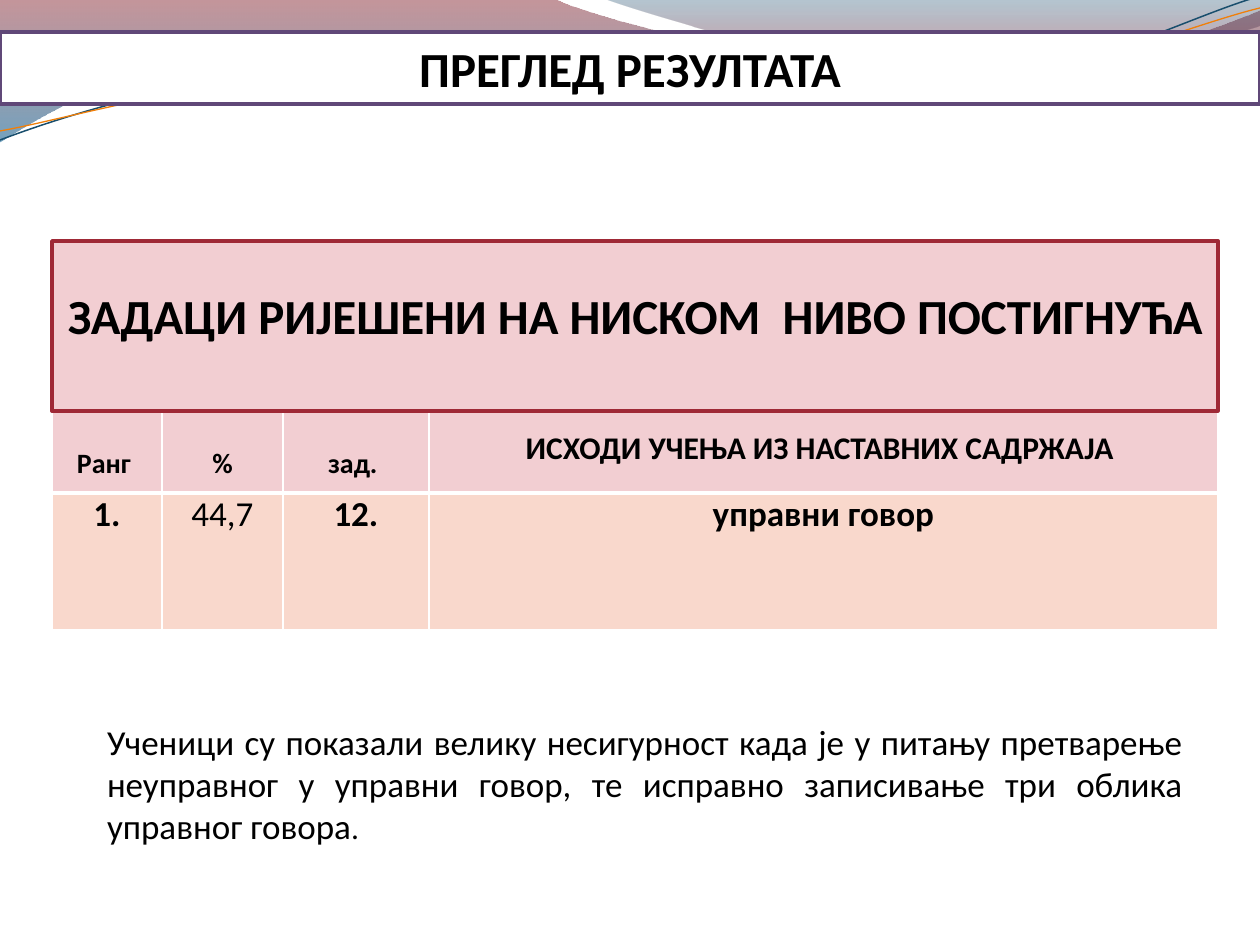
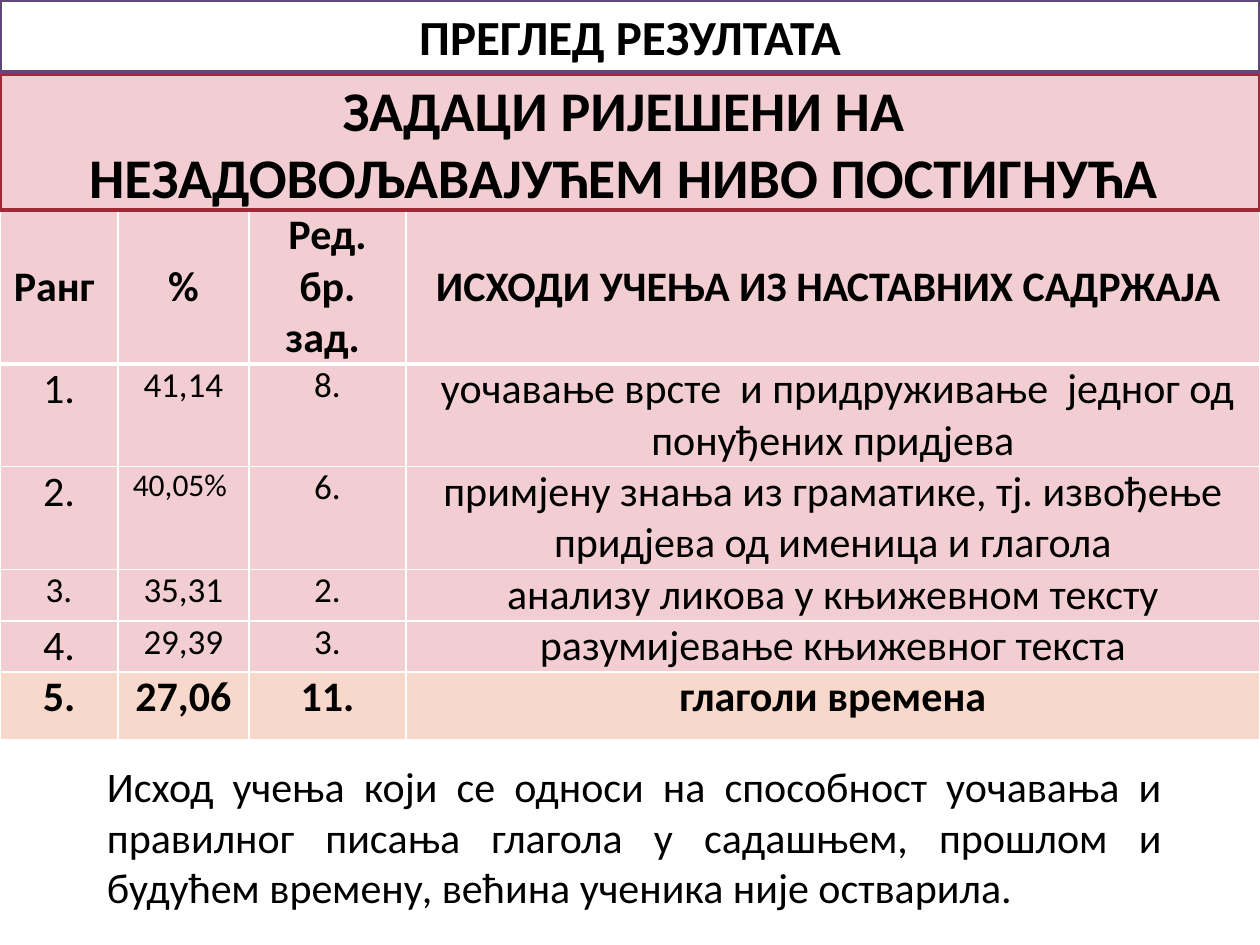
from dataclasses import dataclass
from typing import Any

from lxml.etree import SubElement
from pptx import Presentation
from pptx.dml.color import RGBColor
from pptx.enum.shapes import MSO_SHAPE
from pptx.enum.text import MSO_ANCHOR, MSO_AUTO_SIZE, PP_ALIGN
from pptx.oxml.ns import qn
from pptx.util import Emu, Pt

EMU_PER_PX = 914400 / 126
SLIDE_WIDTH, SLIDE_HEIGHT = 1260, 945
FONT = "Calibri"
HEADING = "ПРЕГЛЕД РЕЗУЛТАТА"
COLORS = {
    "text": "000000",
    "white": "FFFFFF",
    "pink": "F2CED2",
    "peach": "F9D8CC",
    "banner_line": "9F2936",
    "heading_line": "604878",
    "band_red": "7E1621",
    "band_blue": "005689",
    "band_navy": "094467",
    "band_crimson": "A10F1F",
    "wave_navy": "184E6D",
    "wave_orange": "F07F09",
}
Point = tuple[int, int]


@dataclass(frozen=True)
class Box:
    left: int
    top: int
    width: int
    height: int


@dataclass(frozen=True)
class Stop:
    position: float
    color: str
    opacity: int


@dataclass(frozen=True)
class Wave:
    """Path of straight (one point) and cubic (three points) segments."""
    start: Point
    segments: list[list[Point]]
    stops: tuple[Stop, ...] = ()
    line: str = ""
    line_width: float = 0


@dataclass(frozen=True)
class Cell:
    """A line feed in the text starts a paragraph; gap is the space before it."""
    text: str
    size: int
    bold: bool = False
    top: int = 0
    gap: int = 0


@dataclass(frozen=True)
class ResultTable:
    left: int
    top: int
    columns: list[int]
    heights: list[int]
    rows: list[list[Cell]]


WAVES = [
    Wave((0, 0), [
        [(554, -1)],
        [(600, 21), (837, 79), (955, 79)],
        [(1074, 79), (1207, 33), (1260, 11)],
        [(1261, 45)],
        [(1239, 55), (1096, 96), (940, 95)],
        [(784, 95), (481, 35), (324, 43)],
        [(163, 45), (58, 105), (-1, 142)],
        [(0, 0)],
    ], stops=(Stop(0, "band_red", 45), Stop(1, "band_blue", 55))),
    Wave((604, -1), [
        [(643, 14), (859, 78), (969, 82)],
        [(1079, 87), (1211, 40), (1260, 26)],
        [(1260, 0)],
        [(604, -1)],
    ], stops=(Stop(0, "band_navy", 30), Stop(0.8, "band_crimson", 45))),
    Wave((0, 140), [
        [(60, 117), (199, 72), (349, 66)],
        [(498, 59), (747, 112), (898, 101)],
        [(1050, 89), (1182, 19), (1257, -3)],
    ], line="wave_navy", line_width=0.85),
    Wave((0, 131), [
        [(59, 121), (207, 77), (357, 71)],
        [(508, 64), (752, 106), (903, 95)],
        [(1053, 84), (1186, 26), (1260, 8)],
    ], line="wave_orange", line_width=0.75),
]

LOW_RESULTS = ResultTable(52, 378, [110, 121, 146, 789], [115, 137], [
    [Cell("Ранг ", 16, True, 69), Cell("%", 16, True, 69),
     Cell("Ред. бр. \nзад. ", 16, True, gap=35),
     Cell("ИСХОДИ УЧЕЊА ИЗ НАСТАВНИХ САДРЖАЈА ", 18, True, 51)],
    [Cell("1.", 20, True), Cell("44,7", 20), Cell("12.", 20, True),
     Cell("управни говор", 20, True)],
])

POOR_RESULTS = ResultTable(
    0, 210, [118, 131, 157, 854], [154, 102, 103, 51, 51, 68], [
        [Cell("Ранг ", 24, True, 52), Cell("%", 24, True, 52),
         Cell("Ред. бр. зад. ", 24, True),
         Cell("ИСХОДИ УЧЕЊА ИЗ НАСТАВНИХ САДРЖАЈА ", 24, True, 52)],
        [Cell("1.", 24), Cell("41,14", 20), Cell("8.", 20),
         Cell(" уочавање врсте  и придруживање  једног од понуђених придјева", 24)],
        [Cell("2.", 24), Cell("40,05% ", 18), Cell("6.", 20),
         Cell("примјену знања из граматике, тј. извођење придјева од именица и глагола", 24)],
        [Cell("3.", 20), Cell("35,31", 20), Cell("2.", 20),
         Cell("анализу ликова у књижевном тексту", 24)],
        [Cell("4.", 24), Cell("29,39", 20), Cell("3.", 20),
         Cell("разумијевање књижевног текста", 24)],
        [Cell("5.", 24, True), Cell("27,06", 24, True), Cell("11.", 24, True),
         Cell("глаголи времена", 24, True)],
    ])


def px(length: float) -> Emu:
    return Emu(round(length * EMU_PER_PX))


def rgb(name: str) -> RGBColor:
    return RGBColor.from_string(COLORS[name])


def place(shape: Any, box: Box) -> None:
    shape.left, shape.top = px(box.left), px(box.top)
    shape.width, shape.height = px(box.width), px(box.height)


def format_run(run: Any, size: int, bold: bool) -> None:
    run.font.name, run.font.size, run.font.bold = FONT, Pt(size), bold
    run.font.color.rgb = rgb("text")


def write_text(holder: Any, text: str, *, size: int, bold: bool = False,
               align: PP_ALIGN = PP_ALIGN.CENTER, anchor: MSO_ANCHOR = MSO_ANCHOR.TOP,
               side: int = 0, top: int = 0, bottom: int = 0, gap: int = 0) -> None:
    """Fill a shape or a table cell; a vertical tab in the text breaks the line."""
    frame = holder.text_frame
    frame.word_wrap = True
    box = holder if hasattr(holder, "margin_left") else frame
    if box is frame:
        frame.auto_size = MSO_AUTO_SIZE.NONE
    box.vertical_anchor = anchor
    box.margin_left = box.margin_right = px(side)
    box.margin_top, box.margin_bottom = px(top), px(bottom)
    frame.text = text
    for index, paragraph in enumerate(frame.paragraphs):
        paragraph.alignment = align
        if index:
            paragraph.space_before = Pt(round(gap * 72 / 126))
        for run in paragraph.runs:
            format_run(run, size, bold)


def paint(shape: Any, fill: str, line: str) -> None:
    shape.fill.solid()
    shape.fill.fore_color.rgb = rgb(fill)
    shape.line.color.rgb = rgb(line)
    shape.line.width = Pt(2)


def bend_segments(shape: Any, segments: list[list[Point]]) -> None:
    """Turn each run of three straight pieces of a cubic segment into one curve."""
    lines = iter(shape.element.spPr.findall(".//" + qn("a:lnTo")))
    for segment in segments:
        pieces = [next(lines) for _ in segment]
        if len(pieces) == 3:
            curve = SubElement(pieces[0].getparent(), qn("a:cubicBezTo"))
            pieces[0].addprevious(curve)
            for piece in pieces:
                curve.append(piece[0])
                piece.getparent().remove(piece)


def add_wave(slide: Any, wave: Wave) -> Any:
    builder = slide.shapes.build_freeform(px(wave.start[0]), px(wave.start[1]))
    points = [(px(x), px(y)) for segment in wave.segments for x, y in segment]
    builder.add_line_segments(points, close=bool(wave.stops))
    shape = builder.convert_to_shape()
    bend_segments(shape, wave.segments)
    shape.shadow.inherit = False
    if wave.stops:
        shape.line.fill.background()
        shape.fill.gradient()
        shape.fill.gradient_angle = 270
        for gradient_stop, stop in zip(shape.fill.gradient_stops, wave.stops):
            gradient_stop.position = stop.position
            gradient_stop.color.rgb = rgb(stop.color)
        colors = shape.element.spPr.findall(".//" + qn("a:srgbClr"))
        for color, stop in zip(colors, wave.stops):
            SubElement(color, qn("a:alpha"), val=str(stop.opacity * 1000))
    else:
        shape.fill.background()
        shape.line.color.rgb = rgb(wave.line)
        shape.line.width = Pt(wave.line_width)
    return shape


def decorate_layout(layout: Any, slide: Any) -> None:
    """Draw the waves and move them behind everything on the shared layout."""
    first = layout.shapes[0].element
    for number, wave in enumerate(WAVES, start=101):
        element = add_wave(slide, wave).element
        element.nvSpPr.cNvPr.set("id", str(number))
        first.addprevious(element)


def set_borders(cell: Any, top: int, bottom: int) -> None:
    properties = cell._tc.get_or_add_tcPr()
    for index, (side, width) in enumerate(
            (("L", 1), ("R", 1), ("T", top), ("B", bottom))):
        line = SubElement(properties, qn(f"a:ln{side}"), w=str(Pt(width)))
        fill = SubElement(line, qn("a:solidFill"))
        SubElement(fill, qn("a:srgbClr"), val=COLORS["white"])
        properties.insert(index, line)


def add_result_table(slide: Any, results: ResultTable) -> None:
    row_count = len(results.rows)
    table = slide.shapes.add_table(
        row_count, len(results.columns), px(results.left), px(results.top),
        px(sum(results.columns)), px(sum(results.heights))).table
    for column, width in zip(table.columns, results.columns):
        column.width = px(width)
    for row_index, (row, height) in enumerate(zip(results.rows, results.heights)):
        table.rows[row_index].height = px(height)
        for column_index, content in enumerate(row):
            cell = table.cell(row_index, column_index)
            write_text(cell, content.text, size=content.size, bold=content.bold,
                       side=10, top=content.top, gap=content.gap)
            cell.fill.solid()
            cell.fill.fore_color.rgb = rgb("peach" if row_index == row_count - 1 else "pink")
            set_borders(cell, top=3 if row_index == 1 else 1,
                        bottom=3 if row_index == 0 else 1)


def add_comment(slide: Any, box: Box, text: str, *, size: int,
                anchor: MSO_ANCHOR = MSO_ANCHOR.TOP) -> Any:
    shape = slide.shapes.add_textbox(0, 0, 0, 0)
    place(shape, box)
    write_text(shape, text, size=size, align=PP_ALIGN.JUSTIFY, anchor=anchor,
               side=13, top=6, bottom=6)
    return shape


def set_banner(slide: Any, box: Box, text: str, *, size: int, top: int = 0) -> None:
    """Format the title placeholder and bring it in front of the table."""
    title = slide.shapes.title
    place(title, box)
    paint(title, "pink", "banner_line")
    write_text(title, text, size=size, bold=True, top=top)
    title.element.getparent().append(title.element)


def add_heading(slide: Any, top: int) -> None:
    shape = slide.shapes.add_shape(MSO_SHAPE.RECTANGLE, 0, 0, 0, 0)
    place(shape, Box(0, top, SLIDE_WIDTH, 72))
    shape.shadow.inherit = False
    paint(shape, "white", "heading_line")
    write_text(shape, HEADING, size=28, bold=True, side=13, top=6, bottom=6)


def main() -> None:
    presentation = Presentation()
    presentation.slide_width, presentation.slide_height = px(SLIDE_WIDTH), px(SLIDE_HEIGHT)
    layout = presentation.slide_layouts.get_by_name("Title Only")

    low = presentation.slides.add_slide(layout)
    decorate_layout(layout, low)
    add_result_table(low, LOW_RESULTS)
    comment = add_comment(
        low, Box(94, 715, 1102, 140),
        "Ученици су показали велику несигурност када је у питању претварење неуправног "
        "у управни говор, те исправно записивање три облика управног говора", size=20)
    full_stop = comment.text_frame.paragraphs[0].add_run()
    full_stop.text = "."
    format_run(full_stop, size=18, bold=False)
    set_banner(low, Box(52, 241, 1166, 170),
               "ЗАДАЦИ РИЈЕШЕНИ НА НИСКОМ  НИВО ПОСТИГНУЋА", size=28, top=45)
    add_heading(low, 32)

    poor = presentation.slides.add_slide(layout)
    add_result_table(poor, POOR_RESULTS)
    set_banner(poor, Box(0, 74, SLIDE_WIDTH, 136),
               "ЗАДАЦИ РИЈЕШЕНИ НА \vНЕЗАДОВОЉАВАЈУЋЕМ НИВО ПОСТИГНУЋА ", size=32, top=1)
    add_comment(poor, Box(94, 754, 1081, 165),
                "Исход учења који се односи на способност уочавања и правилног писања глагола "
                "у садашњем, прошлом и будућем времену, већина ученика није остварила.",
                size=24, anchor=MSO_ANCHOR.MIDDLE)
    add_heading(poor, 0)

    presentation.save("out.pptx")


if __name__ == "__main__":
    main()
